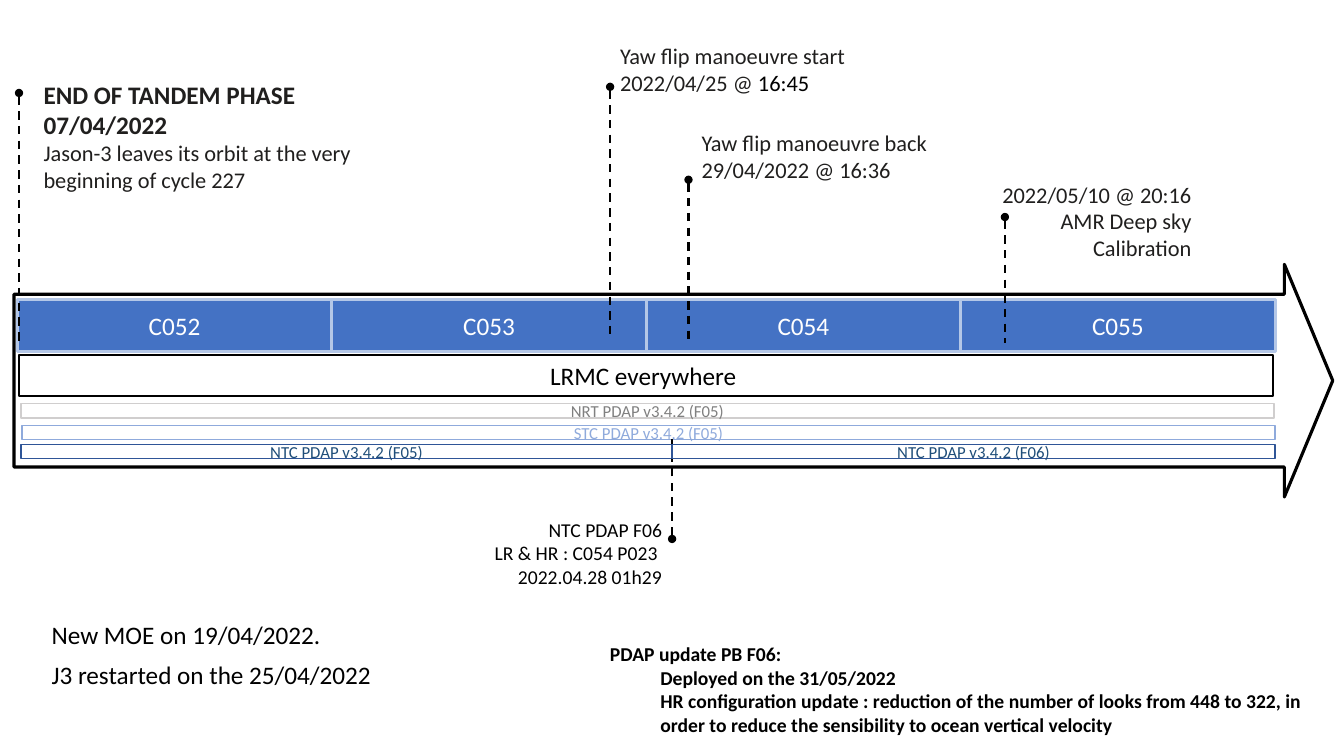
from pptx import Presentation
from pptx.dml.color import RGBColor
from pptx.enum.dml import MSO_LINE
from pptx.enum.shapes import MSO_CONNECTOR, MSO_SHAPE
from pptx.enum.text import MSO_ANCHOR, MSO_AUTO_SIZE, PP_ALIGN
from pptx.oxml.ns import qn
from pptx.util import Pt
from lxml import etree

RECTANGLE, RIGHT_ARROW = MSO_SHAPE.RECTANGLE, MSO_SHAPE.RIGHT_ARROW
STRAIGHT, DASH = MSO_CONNECTOR.STRAIGHT, MSO_LINE.DASH
LEFT, CENTER, RIGHT = PP_ALIGN.LEFT, PP_ALIGN.CENTER, PP_ALIGN.RIGHT
TOP, MIDDLE = MSO_ANCHOR.TOP, MSO_ANCHOR.MIDDLE
FIT_TEXT = MSO_AUTO_SIZE.SHAPE_TO_FIT_TEXT

FONT = "Calibri"
BLACK = RGBColor(0x00, 0x00, 0x00)
WHITE = RGBColor(0xFF, 0xFF, 0xFF)
INK = RGBColor(0x20, 0x1F, 0x1E)
BLUE = RGBColor(0x44, 0x72, 0xC4)
PALE_BLUE = RGBColor(0xB4, 0xC7, 0xE7)
SOFT_BLUE = RGBColor(0x8F, 0xAA, 0xDC)
DEEP_BLUE = RGBColor(0x2F, 0x55, 0x97)
NAVY = RGBColor(0x1F, 0x4E, 0x79)
SILVER = RGBColor(0xD0, 0xCE, 0xCE)
GREY = RGBColor(0x80, 0x80, 0x80)

ARROW_BOX = (10, 188.8, 942, 166.2)
ARROW_SHAFT, ARROW_HEAD = 0.742, 0.208

CYCLES = ["C052", "C053", "C054", "C055"]
CYCLE_LEFT, CYCLE_TOP, CYCLE_WIDTH, CYCLE_HEIGHT = 12.4, 213.7, 224.6, 37.4
TIMELINE_END = CYCLE_LEFT + len(CYCLES) * CYCLE_WIDTH

# Software versions: label, left, top, right, outline, text colour
VERSION_HEIGHT = 10.2
SWITCH_X = 480.1
VERSIONS = [
    ("STC PDAP v3.4.2 (F05)", 15.8, 303.8, TIMELINE_END, SOFT_BLUE, SOFT_BLUE),
    ("NRT PDAP v3.4.2 (F05)", 15, 288.4, TIMELINE_END - 0.8, SILVER, GREY),
    ("NTC PDAP v3.4.2 (F05)", 15, 317.5, SWITCH_X, DEEP_BLUE, NAVY),
]
NEW_VERSION = ("NTC PDAP v3.4.2 (F06)", SWITCH_X, 317.5, TIMELINE_END, DEEP_BLUE, NAVY)

# Event markers: x, y of the dot, y of the other end
MARKERS = [
    (13.6, 66.4, 247.5),
    (435.8, 62, 243.2),
    (491.8, 128.4, 244),
    (717.8, 155, 245),
    (SWITCH_X, 385, 313.8),
]

# Notes: box, alignment, paragraphs of (level, runs); a run is text, size, colour, bold
NOTES = [
    ((24, 52.8, 242, 90), LEFT, [
        (0, [("END OF TANDEM PHASE", 18, INK, True)]),
        (0, [("07/04/2022", 18, INK, True)]),
        (0, [("Jason-3 leaves its orbit at the very beginning of cycle 227", 16, INK, False)]),
    ]),
    ((29.8, 438.5, 252.7, 29), LEFT, [(0, [("New MOE on 19/04/2022.", 18, BLACK, False)])]),
    ((29.8, 467.3, 338.4, 29), LEFT, [(0, [("J3 restarted on the 25/04/2022", 18, BLACK, False)])]),
    ((435.8, 26.8, 179.3, 46), LEFT, [
        (0, [("Yaw flip manoeuvre start", 16, INK, False)]),
        (0, [("2022/04/25 @ ", 16, INK, False), ("16:45", 16, BLACK, False)]),
    ]),
    ((494, 88.8, 179.3, 46), LEFT, [
        (0, [("Yaw flip manoeuvre back 29/04/2022 @ 16:36", 16, INK, False)]),
    ]),
    ((705.4, 125.5, 152.8, 65.4), RIGHT, [
        (0, [("2022/05/10 @ 20:16", 16, INK, False)]),
        (0, [("AMR Deep sky Calibration", 16, INK, False)]),
    ]),
    ((293, 366.3, 187.1, 58.2), RIGHT, [
        (0, [("NTC PDAP F06", 14, BLACK, False)]),
        (0, [("LR & HR : C054 P023 ", 14, BLACK, False)]),
        (0, [("2022.04.28 01h29", 14, BLACK, False)]),
    ]),
    ((428.6, 455.2, 523.4, 75.1), LEFT, [
        (0, [("PDAP update PB F06:", 14, BLACK, True)]),
        (1, [("Deployed on the 31/05/2022", 14, BLACK, True)]),
        (1, [("HR configuration update : reduction of the number of looks from 448 to 322, "
              "in order to reduce the sensibility to ocean vertical velocity", 14, BLACK, True)]),
    ]),
]


def add_run(paragraph, text, size, color, bold=False):
    run = paragraph.add_run()
    run.text = text
    run.font.name = FONT
    run.font.size = Pt(size)
    run.font.color.rgb = color
    run.font.bold = bold


def add_outlined(slide, preset, box, fill, outline, weight):
    shape = slide.shapes.add_shape(preset, *map(Pt, box))
    shape.shadow.inherit = False
    shape.fill.solid()
    shape.fill.fore_color.rgb = fill
    shape.line.color.rgb = outline
    shape.line.width = Pt(weight)
    return shape


def add_bar(slide, label, box, fill, outline, weight, size, color, anchor=MIDDLE):
    frame = add_outlined(slide, RECTANGLE, box, fill, outline, weight).text_frame
    frame.word_wrap = True
    frame.vertical_anchor = anchor
    frame.paragraphs[0].alignment = CENTER
    add_run(frame.paragraphs[0], label, size, color)


def add_version(slide, label, left, top, right, outline, color):
    box = (left, top, right - left, VERSION_HEIGHT)
    add_bar(slide, label, box, WHITE, outline, 1, 12, color)


def add_marker(slide, x, dot_y, end_y):
    marker = slide.shapes.add_connector(STRAIGHT, Pt(x), Pt(dot_y), Pt(x), Pt(end_y))
    marker.line.color.rgb = BLACK
    marker.line.width = Pt(1.5)
    marker.line.dash_style = DASH
    properties = marker.line._get_or_add_ln()
    etree.SubElement(properties, qn("a:headEnd"), type="oval")
    etree.SubElement(properties.getparent(), qn("a:effectLst"))


def add_note(slide, box, alignment, paragraphs):
    frame = slide.shapes.add_textbox(*map(Pt, box)).text_frame
    frame.word_wrap = True
    frame.auto_size = FIT_TEXT
    for index, (level, runs) in enumerate(paragraphs):
        paragraph = frame.add_paragraph() if index else frame.paragraphs[0]
        paragraph.alignment = alignment
        paragraph.level = level
        for run in runs:
            add_run(paragraph, *run)


def main():
    deck = Presentation()
    deck.slide_width, deck.slide_height = Pt(960), Pt(540)
    slide = deck.slides.add_slide(deck.slide_layouts[6])

    arrow = add_outlined(slide, RIGHT_ARROW, ARROW_BOX, WHITE, BLACK, 2.25)
    arrow.adjustments[0], arrow.adjustments[1] = ARROW_SHAFT, ARROW_HEAD

    for index, cycle in enumerate(CYCLES):
        box = (CYCLE_LEFT + index * CYCLE_WIDTH, CYCLE_TOP, CYCLE_WIDTH, CYCLE_HEIGHT)
        add_bar(slide, cycle, box, BLUE, PALE_BLUE, 2.25, 18, WHITE)
    for version in VERSIONS:
        add_version(slide, *version)
    add_bar(slide, "LRMC everywhere ", (13.6, 253.6, 895.8, 29), WHITE, BLACK, 1.5, 18, BLACK, TOP)

    for marker in MARKERS:
        add_marker(slide, *marker)
    for note in NOTES:
        add_note(slide, *note)
    add_version(slide, *NEW_VERSION)

    deck.save("out.pptx")


if __name__ == "__main__":
    main()
